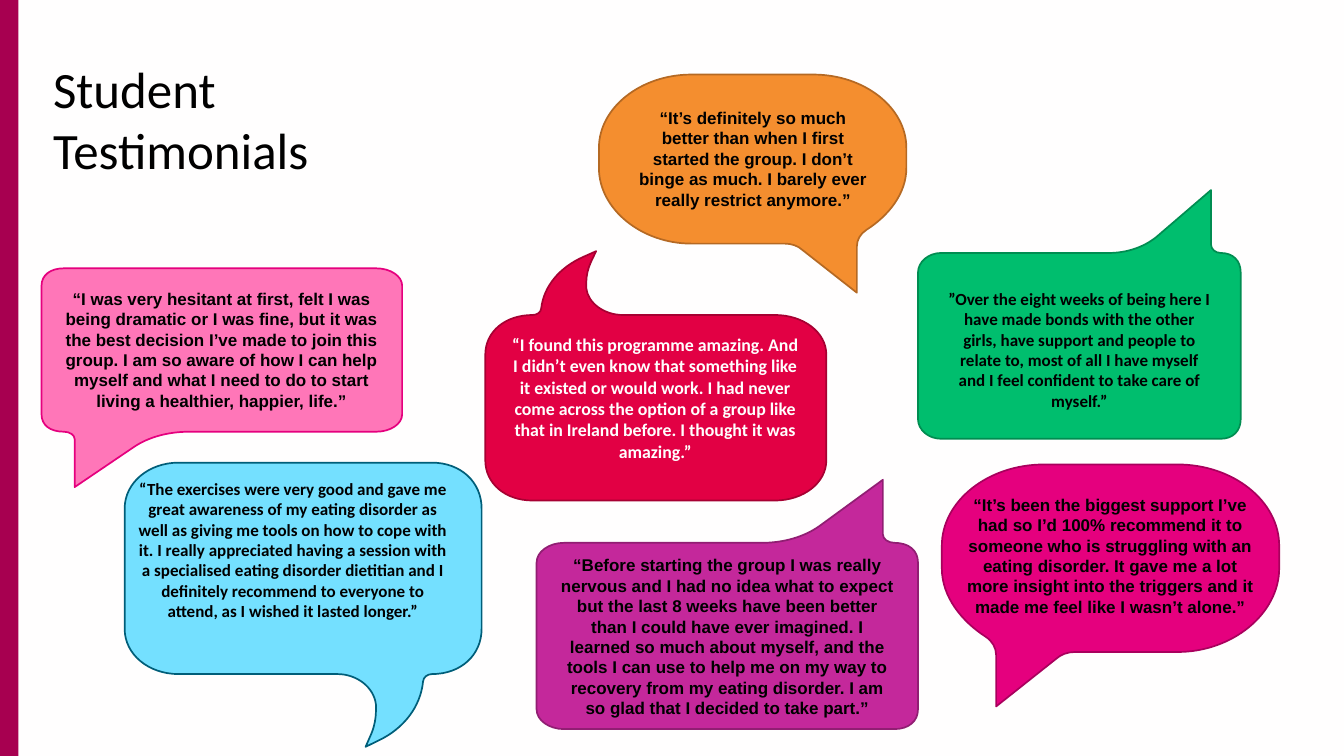
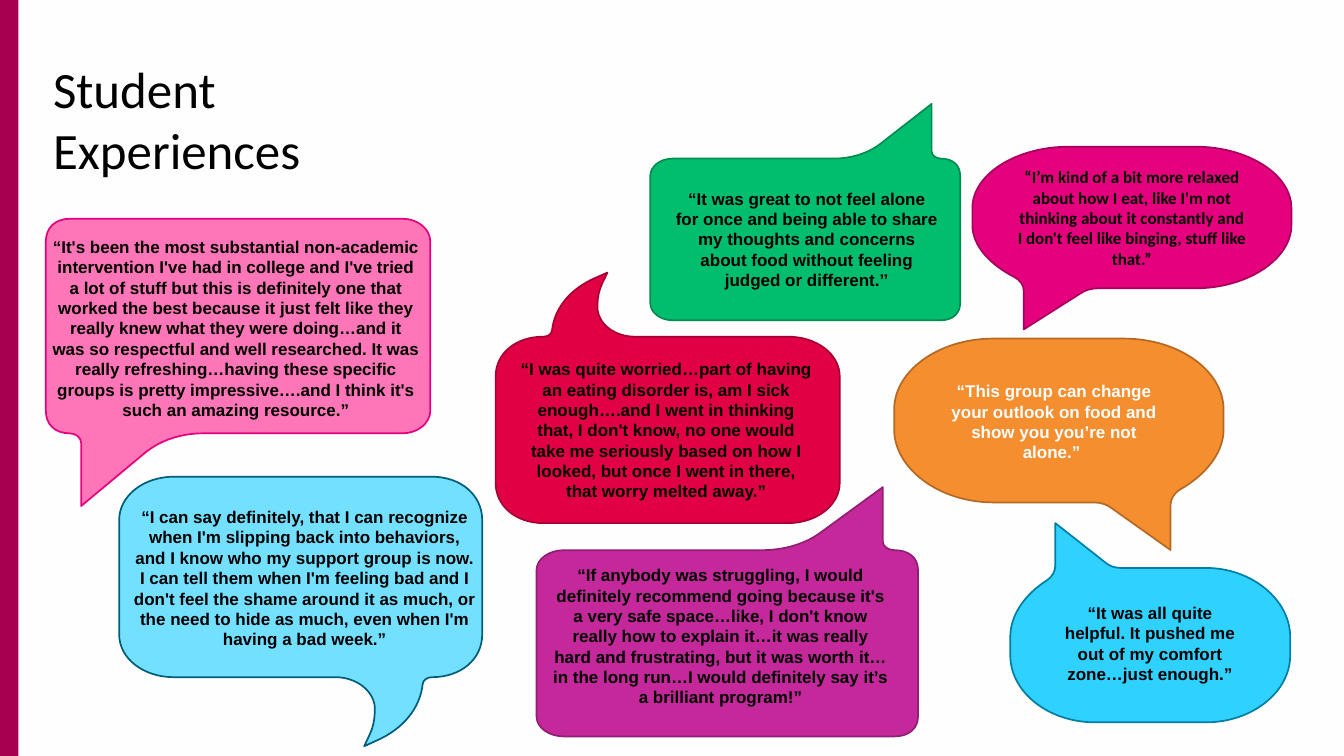
from dataclasses import dataclass
from lxml.etree import SubElement
from pptx import Presentation
from pptx.dml.color import RGBColor
from pptx.enum.shapes import MSO_SHAPE
from pptx.enum.text import MSO_ANCHOR, PP_ALIGN
from pptx.oxml.ns import qn
from pptx.util import Inches, Pt


@dataclass(frozen=True)
class Theme:
    background: str = "FFFEFE"
    band: str = "A70050"
    ink: str = "000000"
    light: str = "FFFEFE"
    title_size: int = 60
    quote_size: int = 20
    quote_leading: int = 24
    outline: int = 2
    heading_font: str = "Calibri"
    quote_font: str = "Arial"


T = Theme()
WIDTH, HEIGHT = 21.99, 12.37

# Fill and outline of each bubble colour
COLOURS = {
    "pink": ("FF76B8", "E5007E"),
    "green": ("00BE6E", "008D51"),
    "magenta": ("E5007E", "A9005D"),
    "red": ("E20044", "A70032"),
    "blue": ("74E0FF", "005E79"),
    "purple": ("C4289B", "911E73"),
    "orange": ("F48E2F", "B56923"),
    "cyan": ("2FD1FF", "007FA3"),
}

# Outlines in percent of the bubble's box, tail pointing down:
# two numbers are a corner, six are a Bezier curve.
OUTLINES = {
    "block": [
        (40.9, 74.7), (92.8, 74.7), (96.8, 74.7, 100, 71.1, 100, 66.8),
        (100, 7.9), (100, 3.6, 96.8, 0, 92.8, 0),
        (6.2, 0), (2.4, 0, 0, 3.2, 0, 7.9),
        (0, 66.8), (0, 71.7, 2.4, 74.7, 6.2, 74.7),
        (7.8, 74.7, 9.2, 76.2, 9.2, 78.1), (9.2, 100),
        (25.6, 81.7), (29.6, 77.2, 35.1, 74.7, 40.9, 74.7),
    ],
    "oval": [
        (33.9, 80.3), (35.3, 78.5, 37.3, 77.5, 39.5, 77.5),
        (69.9, 77.5), (86.2, 77.5, 100, 61.6, 100, 42.9),
        (100, 33.6), (100, 15.2, 86.4, 0, 69.9, 0),
        (30.3, 0), (13.6, 0, 0, 15.2, 0, 33.6),
        (0, 42.9), (0, 54.8, 6, 64.9, 13, 71.2),
        (15, 73, 16.1, 75.8, 16.1, 78.8), (16.1, 100), (33.9, 80.3),
    ],
    "curl": [
        (69, 95.7), (69.9, 93.1, 70.4, 90.1, 70.4, 87.1),
        (70.4, 86.5, 70.4, 85.8, 70.4, 85.2),
        (69.9, 79.1, 65.1, 74.4, 59.6, 74.4),
        (15.1, 74.4), (6.7, 74.4, 0, 67.5, 0, 58.5),
        (0, 16.1), (0, 7.1, 6.7, 0, 15.1, 0),
        (86.1, 0), (94.2, 0, 100, 6.9, 100, 16.1),
        (100, 58.5), (100, 67.7, 94.2, 74.4, 86.1, 74.4),
        (84.8, 74.4, 83.7, 75.5, 83.6, 77),
        (82.9, 85.8, 78.3, 93.5, 71.1, 97.8), (67.5, 100), (69, 95.7),
    ],
}

# Each quote: outline, mirrored axes, colour, bubble box, text box, text, format
SLIDES = [
    ("Student Testimonials", [
        ("block", "", "pink", (0.68, 4.39, 5.9, 3.58), (0.82, 4.67, 5.61, 2.12),
         "“I was very hesitant at first, felt I was being dramatic or I was fine, but it was "
         "the best decision I’ve made to join this group. I am so aware of how I can help "
         "myself and what I need to do to start living a healthier, happier, life.”", {}),
        ("block", "xy", "green", (15.02, 3.11, 5.28, 4.07), (15.41, 4.67, 4.5, 2.12),
         "”Over the eight weeks of being here I have made bonds with the other girls, have "
         "support and people to relate to, most of all I have myself and I feel confident to "
         "take care of myself.”", {"font": T.heading_font}),
        ("oval", "", "magenta", (15.41, 7.6, 5.52, 3.96), (15.65, 8.04, 5.03, 3.1),
         "“It’s been the biggest support I’ve had so I’d 100% recommend it to someone who is "
         "struggling with an eating disorder. It gave me a lot more insight into the triggers "
         "and it made me feel like I wasn’t alone.”", {}),
        ("curl", "xy", "red", (7.94, 4.11, 5.58, 4.08), (8.23, 5.41, 4.98, 2.57),
         "“I found this programme amazing. And I didn’t even know that something like it "
         "existed or would work. I had never come across the option of a group like that in "
         "Ireland before. I thought it was amazing.”",
         {"font": T.heading_font, "size": 21, "color": T.light, "leading": None}),
        ("curl", "", "blue", (2.04, 7.57, 5.84, 4.65), (2.17, 7.78, 5.24, 3.13),
         "“The exercises were very good and gave me great awareness of my eating disorder as "
         "well as giving me tools on how to cope with it. I really appreciated having a session "
         "with a specialised eating disorder dietitian and I definitely recommend to everyone "
         "to attend, as I wished it lasted longer.”", {"font": T.heading_font}),
        ("block", "xy", "purple", (8.78, 7.85, 6.24, 4.08), (9.06, 9.03, 5.68, 2.79),
         "“Before starting the group I was really nervous and I had no idea what to expect but "
         "the last 8 weeks have been better than I could have ever imagined. I learned so much "
         "about myself, and the tools I can use to help me on my way to recovery from my eating "
         "disorder. I am so glad that I decided to take part.”", {}),
        ("oval", "x", "orange", (9.8, 1.22, 5.03, 3.57), (10.28, 1.71, 4.08, 1.78),
         "“It’s definitely so much better than when I first started the group. I don’t binge as "
         "much. I barely ever really restrict anymore.”", {}),
    ]),
    ("Student Experiences", [
        ("block", "", "pink", (0.75, 3.58, 6.29, 4.7), (0.75, 3.82, 6.22, 3.13),
         "“It's been the most substantial non-academic intervention I've had in college and "
         "I've tried a lot of stuff but this is definitely one that worked the best because it "
         "just felt like they really knew what they were doing…and it was so respectful and "
         "well researched. It was really refreshing…having these specific groups is pretty "
         "impressive….and I think it's such an amazing resource.”", {}),
        ("block", "xy", "green", (10.64, 1.7, 5.07, 3.54), (10.95, 3.03, 4.5, 1.78),
         "“It was great to not feel alone for once and being able to share my thoughts and "
         "concerns about food without feeling judged or different.’’", {}),
        ("oval", "", "magenta", (15.91, 2.4, 5.22, 2.99), (16.53, 2.68, 3.98, 1.78),
         "“I’m kind of a bit more relaxed about how I eat, like I'm not thinking about it "
         "constantly and I don't feel like binging, stuff like that.”",
         {"font": T.heading_font}),
        ("oval", "x", "orange", (14.63, 5.54, 5.39, 3.46), (15.3, 6.18, 3.89, 1.45),
         "“This group can change your outlook on food and show you you’re not alone.” ",
         {"color": T.light}),
        ("curl", "xy", "red", (8.11, 4.46, 5.63, 4.1), (8.41, 5.82, 4.98, 2.46),
         "“I was quite worried…part of having an eating disorder is, am I sick enough….and I "
         "went in thinking that, I don't know, no one would take me seriously based on how I "
         "looked, but once I went in there, that worry melted away.”", {}),
        ("curl", "", "blue", (1.95, 7.8, 5.94, 4.41), (2.08, 8.24, 5.81, 2.46),
         "“I can say definitely, that I can recognize when I'm slipping back into behaviors, "
         "and I know who my support group is now. I can tell them when I'm feeling bad and I "
         "don't feel the shame around it as much, or the need to hide as much, even when I'm "
         "having a bad week.”", {}),
        ("block", "xy", "purple", (8.78, 7.97, 6.24, 4.08), (8.95, 9.19, 5.68, 2.46),
         "“If anybody was struggling, I would definitely recommend going because it's a very "
         "safe space…like, I don't know really how to explain it…it was really hard and "
         "frustrating, but it was worth it…in the long run…I would definitely say it’s a "
         "brilliant program!”", {}),
        ("oval", "y", "cyan", (16.53, 8.56, 4.58, 3.26), (17.19, 9.81, 3.25, 1.45),
         "“It was all quite helpful. It pushed me out of my comfort zone…just enough.”", {}),
    ]),
]


def rgb(value):
    return RGBColor.from_string(value)


def add_text(slide, box, text, *, font=T.quote_font, size=T.quote_size, color=T.ink, bold=True,
             align=PP_ALIGN.CENTER, anchor=MSO_ANCHOR.TOP, leading=T.quote_leading):
    tf = slide.shapes.add_textbox(*map(Inches, box)).text_frame
    tf.word_wrap = True
    tf.vertical_anchor = anchor
    p = tf.paragraphs[0]
    p.alignment = align
    if leading:
        p.line_spacing = Pt(leading)
    r = p.add_run()
    r.text = text
    r.font.name, r.font.size, r.font.bold = font, Pt(size), bold
    r.font.color.rgb = rgb(color)


def draw_curves(sp, outline, mirror):
    """Give the freeform an outline with true Bezier curves."""
    geometry = next(sp._element.iter(qn("a:path")))
    for child in list(geometry):
        geometry.remove(child)
    for i, part in enumerate(outline):
        tag = "a:moveTo" if i == 0 else "a:lnTo" if len(part) == 2 else "a:cubicBezTo"
        segment = SubElement(geometry, qn(tag))
        for x, y in zip(part[::2], part[1::2]):
            x = 100 - x if "x" in mirror else x
            y = 100 - y if "y" in mirror else y
            SubElement(segment, qn("a:pt"), x=str(round(sp.width * x / 100)),
                       y=str(round(sp.height * y / 100)))
    SubElement(geometry, qn("a:close"))


def add_bubble(slide, outline, mirror, colour, box):
    left, top, width, height = map(Inches, box)
    right, bottom = left + width, top + height
    builder = slide.shapes.build_freeform(left, top)
    builder.add_line_segments([(right, top), (right, bottom), (left, bottom)], close=True)
    sp = builder.convert_to_shape()
    draw_curves(sp, OUTLINES[outline], mirror)
    sp.shadow.inherit = False
    fill, line = COLOURS[colour]
    sp.fill.solid()
    sp.fill.fore_color.rgb = rgb(fill)
    sp.line.color.rgb = rgb(line)
    sp.line.width = Pt(T.outline)


def add_base(prs, title):
    """Add a slide with the shared background, side band and title."""
    slide = prs.slides.add_slide(prs.slide_layouts[6])
    slide.background.fill.solid()
    slide.background.fill.fore_color.rgb = rgb(T.background)
    band = slide.shapes.add_shape(MSO_SHAPE.RECTANGLE, 0, 0, Inches(0.3), Inches(HEIGHT))
    band.shadow.inherit = False
    band.fill.solid()
    band.fill.fore_color.rgb = rgb(T.band)
    band.line.fill.background()
    add_text(slide, (0.77, 0.9, 4.97, 2.07), title, font=T.heading_font, size=T.title_size,
             bold=False, align=PP_ALIGN.LEFT, anchor=MSO_ANCHOR.MIDDLE, leading=None)
    return slide


def main():
    prs = Presentation()
    prs.slide_width, prs.slide_height = Inches(WIDTH), Inches(HEIGHT)
    for title, quotes in SLIDES:
        slide = add_base(prs, title)
        for outline, mirror, colour, bubble_box, _, _, _ in quotes:
            add_bubble(slide, outline, mirror, colour, bubble_box)
        for _, _, _, _, text_box, text, style in quotes:
            add_text(slide, text_box, text, **style)
    prs.save("out.pptx")


if __name__ == "__main__":
    main()
